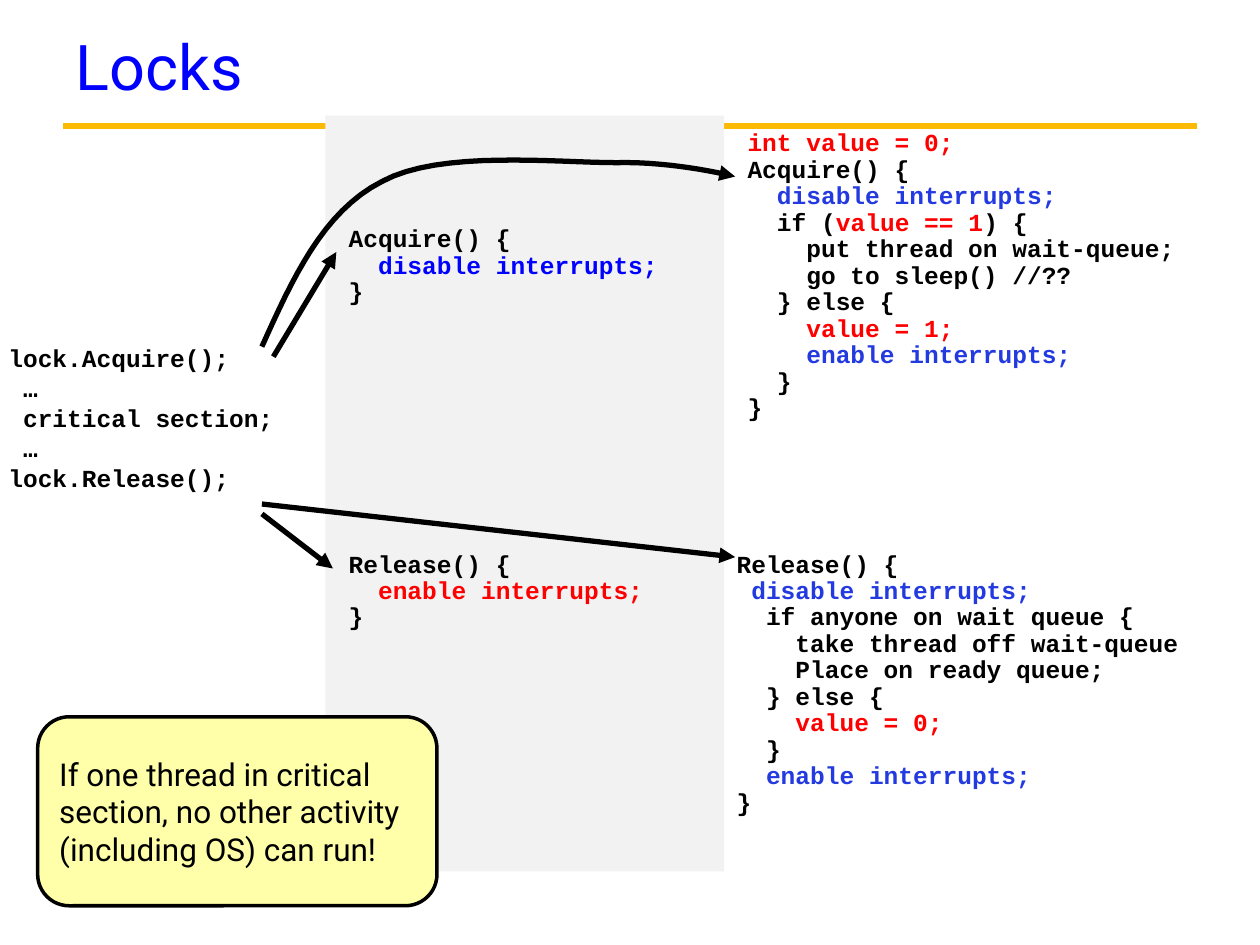
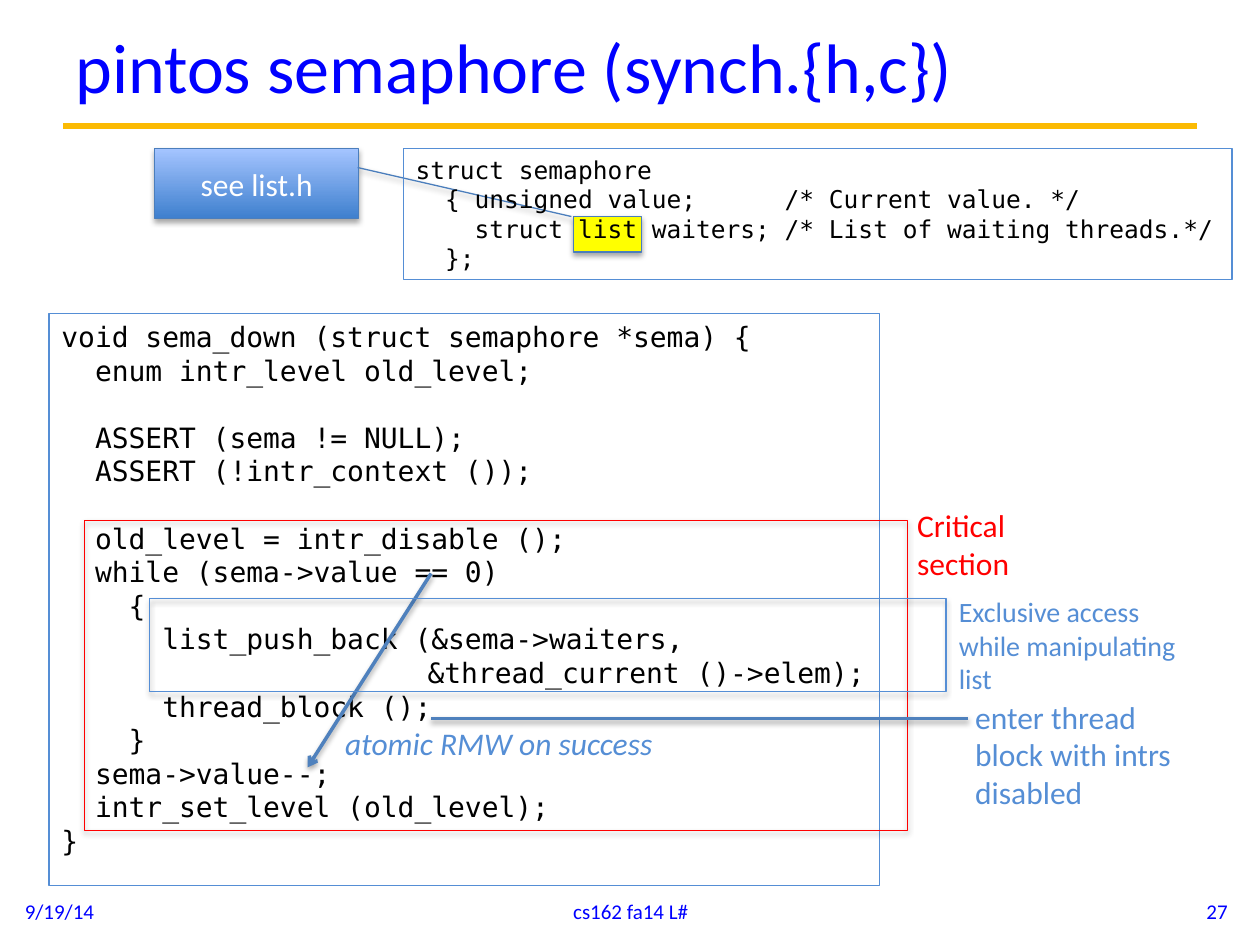
from lxml import etree
from pptx import Presentation
from pptx.dml.color import RGBColor
from pptx.enum.shapes import MSO_CONNECTOR, MSO_SHAPE
from pptx.enum.text import MSO_ANCHOR, PP_ALIGN
from pptx.oxml.ns import qn
from pptx.util import Cm, Pt

# Shared look
BLACK, WHITE, RED, TITLE_BLUE = "000000", "FFFFFF", "FF0000", "0000FF"
INTERRUPT_BLUE, NOTE_BLUE, EDGE_BLUE, ARROW_BLUE = "233AE1", "558ED5", "4B7EBC", "4F81BD"
GOLD, PANEL_GREY, PALE_YELLOW, YELLOW = "FBBA03", "F2F2F2", "FFFFAA", "FFFF00"
CALLOUT_GRADIENT = ("3F80CE", "A4C4FF")
SANS, ROBOTO, COURIER, MONO = "Calibri", "Roboto", "Courier New", "DejaVu Sans Mono"
TITLE_BOX = (1.27, 0.1, 22.86, 2.44)
RULE = ((1.27, 2.54), (24.13, 2.54))

# Slide 1 content: a code line is a string or a list of (text, colour) parts
LOCK_PANEL = (6.56, 2.33, 8.04, 15.24)
CALLER_BOX = (-0.08, 6.91, 7.26, 4.52)
CALLER = ["lock.Acquire();", " …", " critical section;", " …", "lock.Release();"]
LOCK_CODE = [
    ((14.82, 2.51, 10.58, 6.2), [
        [("int value = 0;", RED)],
        "Acquire() {",
        [("  disable interrupts;", INTERRUPT_BLUE)],
        [("  if (", BLACK), ("value == 1", RED), (") {", BLACK)],
        "    put thread on wait-queue;",
        "    go to sleep() //??",
        "  } else {",
        [("    value = 1;", RED)],
        [("    enable interrupts;", INTERRUPT_BLUE)],
        "  }",
        "}",
    ]),
    ((14.6, 11, 10.8, 5.66), [
        "Release() {",
        [(" disable interrupts;", INTERRUPT_BLUE)],
        "  if anyone on wait queue {",
        "    take thread off wait-queue",
        "    Place on ready queue;",
        "  } else {",
        [("    value = 0;", RED)],
        "  }",
        [("  enable interrupts;", INTERRUPT_BLUE)],
        "}",
    ]),
    ((6.78, 4.44, 8.69, 1.88),
     ["Acquire() {", [("  disable interrupts;", TITLE_BLUE)], "}"]),
    ((6.78, 11, 7.62, 1.88),
     ["Release() {", [("  enable interrupts;", RED)], "}"]),
]
CALL_ARROWS = [
    ((5.28, 10.36), (6.71, 11.46)),
    ((5.28, 10.16), (14.82, 11.23)),
    ((5.51, 7.19), (6.78, 5.08)),
]
# Start point, then two control points and an end point per curve
ACQUIRE_START = (5.28, 6.99)
ACQUIRE_CURVES = [
    ((5.89, 5.64), (6.5, 4.27), (7.7, 3.66)),
    ((8.86, 3.02), (11.23, 3.28), (12.42, 3.28)),
    ((13.61, 3.25), (14.82, 3.56), (14.82, 3.56)),
]
WARNING_BOX = (0.76, 14.45, 8.05, 3.81)
WARNING = "If one thread in critical section, no other activity (including OS) can run!"

# Slide 2 content: an empty code line becomes space before the next one
STRUCT_BOX = (8.13, 3, 16.71, 2.64)
STRUCT = [
    "struct semaphore",
    "  { unsigned value;      /* Current value. */",
    "    struct list waiters; /* List of waiting threads.*/",
    "  };",
]
SEMA_DOWN_BOX = (0.99, 6.32, 16.74, 11.53)
SEMA_DOWN = [
    "void sema_down (struct semaphore *sema) {",
    "  enum intr_level old_level;",
    "",
    "  ASSERT (sema != NULL);",
    "  ASSERT (!intr_context ());",
    "",
    "  old_level = intr_disable ();",
    "  while (sema->value == 0)",
    "    {",
    "      list_push_back (&sema->waiters,",
    "&thread_current ()->elem);",
    "      thread_block ();",
    "    }",
    "  sema->value--;",
    "  intr_set_level (old_level);",
    "}",
]
ARGUMENT_INDENTS = {"&thread_current ()->elem);": 7.38}
LIST_MARK = (11.56, 4.37, 1.37, 0.71)
LIST_CALLOUT = (3.12, 3, 4.11, 1.4)
CALLOUT_POINTS = (0.27, 0.995, 0.976, 2.044)
REGIONS = [
    ((1.7, 10.49, 16.59, 6.25), RED),
    ((3.02, 12.06, 16.05, 1.88), NOTE_BLUE),
]
NOTES = [  # box, text, size, colour, italic
    ((6.71, 14.48, 6.93, 1.02), "atomic RMW on success", 18, NOTE_BLUE, True),
    ((18.24, 10.08, 3.05, 1.8), "Critical section", 18, RED, False),
    ((19.08, 11.86, 5.05, 2.31), "Exclusive access while manipulating list", 16, NOTE_BLUE, False),
    ((19.41, 13.94, 5.18, 2.57), "enter thread block with intrs disabled", 18, NOTE_BLUE, False),
]
SUCCESS_ARROW = ((8.69, 11.56), (6.2, 15.47))
BLOCK_LINE = ((19.51, 14.48), (8.69, 14.48))
FOOTERS = [
    ((0.25, 17.86, 5.92, 1.02), "9/19/14", PP_ALIGN.LEFT),
    ((8.69, 17.86, 8.05, 1.02), "cs162 fa14 L#", PP_ALIGN.CENTER),
    ((19.08, 17.86, 5.92, 1.02), "27", PP_ALIGN.RIGHT),
]


def rgb(hex_color):
    return RGBColor.from_string(hex_color)


def cms(values):
    return [Cm(value) for value in values]


def set_effect(shape, shadow):
    """Replace the theme shadow with none, or with a soft one below."""
    effects = etree.SubElement(shape._element.spPr, qn("a:effectLst"))
    if shadow:
        outer = etree.SubElement(effects, qn("a:outerShdw"), blurRad=str(Pt(3.1)),
                                 dist=str(Pt(1.8)), dir="5400000", rotWithShape="0")
        color = etree.SubElement(outer, qn("a:srgbClr"), val=BLACK)
        etree.SubElement(color, qn("a:alpha"), val="35000")


def set_stroke(shape, color, width, head=None, shadow=False):
    shape.line.color.rgb = rgb(color)
    shape.line.width = Pt(width)
    if head:
        etree.SubElement(shape.line._get_or_add_ln(), qn("a:tailEnd"), type=head)
    set_effect(shape, shadow)


def add_line(slide, ends, color, width, head=None, shadow=False):
    start, end = ends
    line = slide.shapes.add_connector(MSO_CONNECTOR.STRAIGHT, *cms(start + end))
    set_stroke(line, color, width, head, shadow)


def add_block(slide, kind, box, fill=None, edge=None, width=0.75, shadow=False):
    block = slide.shapes.add_shape(kind, *cms(box))
    if fill:
        block.fill.solid()
        block.fill.fore_color.rgb = rgb(fill)
    else:
        block.fill.background()
    if edge:
        set_stroke(block, edge, width, shadow=shadow)
    else:
        block.line.fill.background()
        set_effect(block, shadow)
    return block


def write(shape, lines, size, font, color=BLACK, bold=False, italic=False,
          align=PP_ALIGN.LEFT, anchor=MSO_ANCHOR.TOP, spacing=None, before=0, indents=None):
    frame = shape.text_frame
    frame.word_wrap = True
    frame.vertical_anchor = anchor
    gap = 0
    paragraph = None
    for line in lines:
        if not line:
            gap += size * 1.2
            continue
        if paragraph is None:
            paragraph = frame.paragraphs[0]
        else:
            paragraph = frame.add_paragraph()
            paragraph.space_before = Pt(before + gap)
        gap = 0
        paragraph.alignment = align
        if spacing:
            paragraph.line_spacing = spacing
        if indents and line in indents:
            paragraph._p.get_or_add_pPr().set("marL", str(Cm(indents[line])))
        paragraph.font.size = Pt(size)
        paragraph.font.name = font
        paragraph.font.bold = bold
        paragraph.font.italic = italic
        parts = [(line, color)] if isinstance(line, str) else line
        for text, part_color in parts:
            run = paragraph.add_run()
            run.text = text
            run.font.color.rgb = rgb(part_color)


def add_text(slide, box, lines, size, font, **style):
    write(slide.shapes.add_textbox(*cms(box)), lines, size, font, **style)


def add_titled_slide(deck, title, size, font):
    slide = deck.slides.add_slide(deck.slide_layouts[5])
    heading = slide.shapes.title
    heading.left, heading.top, heading.width, heading.height = cms(TITLE_BOX)
    write(heading, [title], size, font, TITLE_BLUE, anchor=MSO_ANCHOR.MIDDLE)
    add_line(slide, RULE, GOLD, 3.75)
    return slide


def curve_points(start, curves, steps=16):
    for first, second, end in curves:
        for step in range(1, steps + 1):
            t = step / steps
            u = 1 - t
            yield tuple(Cm(u**3 * a + 3 * u * u * t * b + 3 * u * t * t * c + t**3 * d)
                        for a, b, c, d in zip(start, first, second, end))
        start = end


def build_locks(deck):
    slide = add_titled_slide(deck, "Locks", 36, ROBOTO)
    add_block(slide, MSO_SHAPE.RECTANGLE, LOCK_PANEL, PANEL_GREY)

    # Code
    for box, lines in LOCK_CODE:
        add_text(slide, box, lines, 14, COURIER, bold=True, spacing=0.9)
    add_text(slide, CALLER_BOX, CALLER, 14, COURIER, bold=True, spacing=0.8, before=3.6)

    # Arrows from the calls to the bodies
    for ends in CALL_ARROWS:
        add_line(slide, ends, BLACK, 3, "triangle")
    builder = slide.shapes.build_freeform(*cms(ACQUIRE_START))
    builder.add_line_segments(curve_points(ACQUIRE_START, ACQUIRE_CURVES), close=False)
    acquire_arrow = builder.convert_to_shape()
    acquire_arrow.fill.background()
    set_stroke(acquire_arrow, BLACK, 3, "triangle")

    # Warning
    warning = add_block(slide, MSO_SHAPE.ROUNDED_RECTANGLE, WARNING_BOX, PALE_YELLOW, BLACK, 2)
    write(warning, [WARNING], 18, ROBOTO, anchor=MSO_ANCHOR.MIDDLE)


def build_semaphore(deck):
    slide = add_titled_slide(deck, "pintos semaphore (synch.{h,c})", 40, SANS)

    # Highlighted type and its callout
    add_block(slide, MSO_SHAPE.RECTANGLE, LIST_MARK, YELLOW, EDGE_BLUE, shadow=True)
    callout = add_block(slide, MSO_SHAPE.LINE_CALLOUT_1, LIST_CALLOUT, WHITE, EDGE_BLUE, shadow=True)
    for index, value in enumerate(CALLOUT_POINTS):
        callout.adjustments[index] = value
    callout.fill.gradient()
    callout.fill.gradient_angle = 90
    for position, (stop, color) in enumerate(zip(callout.fill.gradient_stops, CALLOUT_GRADIENT)):
        stop.position = position
        stop.color.rgb = rgb(color)
    write(callout, ["see list.h"], 18, SANS, WHITE, align=PP_ALIGN.CENTER,
          anchor=MSO_ANCHOR.MIDDLE)

    # Code
    for box, lines, size in ((SEMA_DOWN_BOX, SEMA_DOWN, 16), (STRUCT_BOX, STRUCT, 14)):
        code = add_block(slide, MSO_SHAPE.RECTANGLE, box, edge=NOTE_BLUE)
        write(code, lines, size, MONO, indents=ARGUMENT_INDENTS)

    # Marked regions, arrows and notes
    add_line(slide, SUCCESS_ARROW, ARROW_BLUE, 2, "arrow", shadow=True)
    for box, color in REGIONS:
        add_block(slide, MSO_SHAPE.RECTANGLE, box, edge=color, shadow=True)
    add_line(slide, BLOCK_LINE, ARROW_BLUE, 2, shadow=True)
    for box, text, size, color, italic in NOTES:
        add_text(slide, box, [text], size, SANS, color=color, italic=italic)

    # Footers
    for box, text, align in FOOTERS:
        add_text(slide, box, [text], 12, SANS, color=TITLE_BLUE, align=align,
                 anchor=MSO_ANCHOR.MIDDLE)


def main():
    deck = Presentation()
    deck.slide_width, deck.slide_height = Cm(25.4), Cm(19.05)
    build_locks(deck)
    build_semaphore(deck)
    deck.save("out.pptx")


if __name__ == "__main__":
    main()
